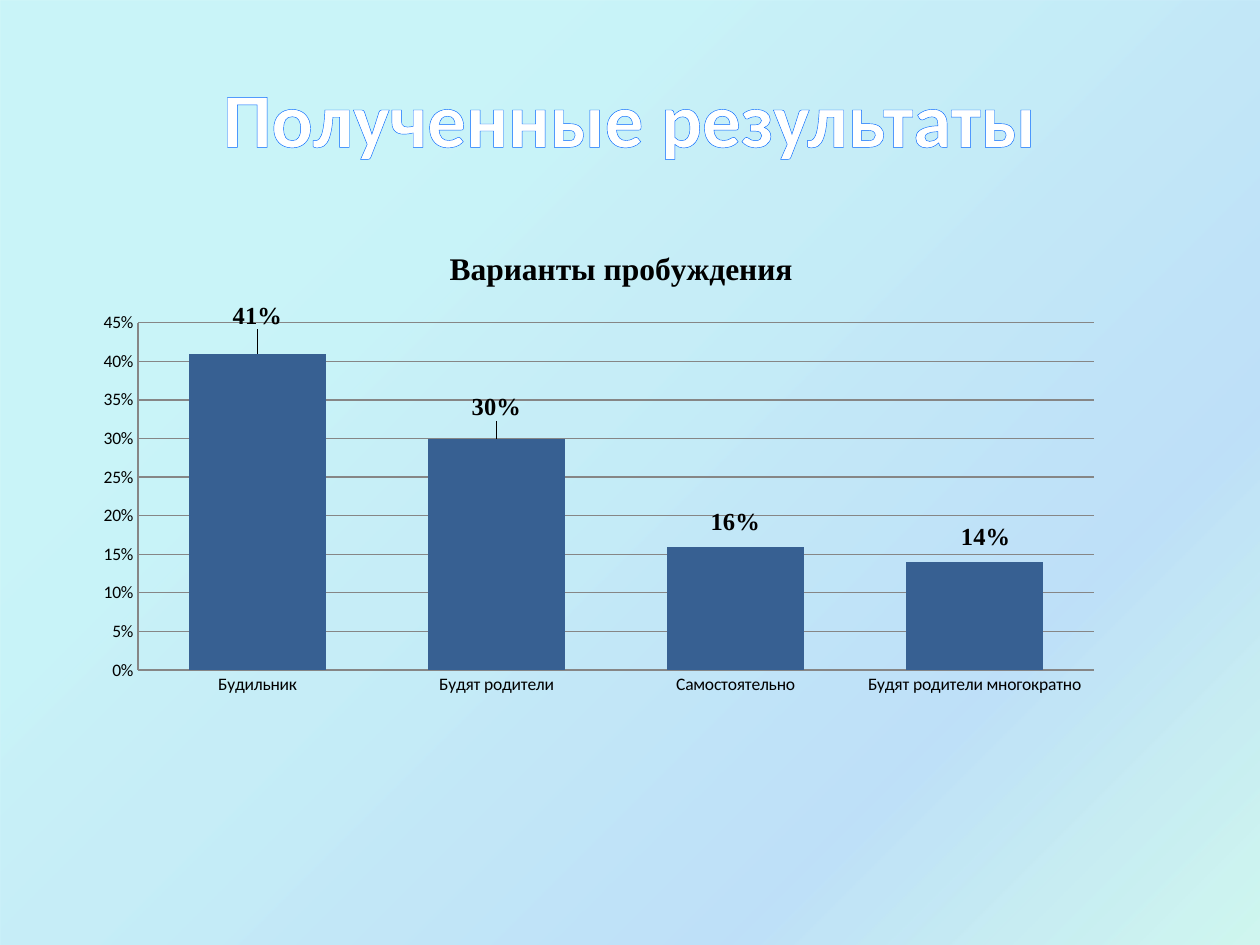
from pptx import Presentation, oxml
from pptx.chart import data as chart_data
from pptx.dml.color import RGBColor
from pptx.enum import chart as chart_enum, shapes, text
from pptx.oxml import ns
from pptx.util import Inches, Pt

GRADIENT = [(25, "21D6E0", 23), (75, "0087E6", 25), (100, "03D4A8", 18), (100, "005CBF", 26)]
ANSWERS = {
    "Будильник": 0.41,
    "Будят родители": 0.3,
    "Самостоятельно": 0.16,
    "Будят родители многократно": 0.14,
}
LABEL_SHIFTS = [(0, -0.03), (0, -0.02), (0, -0.01), (0.01, -0.01)]


def color(value):
    return RGBColor.from_string(value)


def format_font(font, name="Calibri", size=10, bold=False, fill="000000"):
    font.name = name
    font.size = Pt(size)
    font.bold = bold
    font.color.rgb = color(fill)


def write_text(frame, content, align=text.PP_ALIGN.CENTER, **font_format):
    paragraph = frame.paragraphs[0]
    paragraph.alignment = align
    run = paragraph.add_run()
    run.text = content
    format_font(run.font, **font_format)
    return run


def manual_layout(x, y, width=None, height=None):
    parts = f'<c:x val="{x}"/><c:y val="{y}"/>'
    modes = ""
    if width:
        modes = '<c:layoutTarget val="inner"/><c:xMode val="edge"/><c:yMode val="edge"/>'
        parts += f'<c:w val="{width}"/><c:h val="{height}"/>'
    return oxml.parse_xml(
        f'<c:layout {ns.nsdecls("c")}><c:manualLayout>{modes}{parts}</c:manualLayout></c:layout>'
    )


class SlideBuilder:
    line_color = "868686"
    bar_color = "376092"
    serif = "Times New Roman"

    def __init__(self, presentation):
        self.slide = presentation.slides.add_slide(presentation.slide_layouts[5])

    def backdrop(self, stops, angle):
        shape = self.slide.shapes.add_shape(
            shapes.MSO_SHAPE.RECTANGLE, 0, 0, Inches(10), Inches(7.67)
        )
        shape.shadow.inherit = False
        shape.line.fill.background()
        shape.fill.gradient()
        stop_list = "".join(
            f'<a:gs pos="{position * 1000}"><a:srgbClr val="{value}">'
            f'<a:alpha val="{alpha * 1000}"/></a:srgbClr></a:gs>'
            for position, value, alpha in stops
        )
        gradient = oxml.parse_xml(
            f'<a:gradFill {ns.nsdecls("a")} rotWithShape="1"><a:gsLst>{stop_list}</a:gsLst>'
            f'<a:lin ang="{angle * 60000}" scaled="0"/></a:gradFill>'
        )
        properties = shape.element.spPr
        properties.replace(properties.find(ns.qn("a:gradFill")), gradient)
        self.slide.shapes.element.insert(2, shape.element)

    def title(self, content, outline, outline_width):
        title = self.slide.shapes.title
        title.left, title.top = Inches(0.5), Inches(0.3)
        title.width, title.height = Inches(9), Inches(1.25)
        title.text_frame.vertical_anchor = text.MSO_ANCHOR.MIDDLE
        run = write_text(title.text_frame, content, size=44, bold=True, fill="FFFFFF")
        line = oxml.parse_xml(
            f'<a:ln {ns.nsdecls("a")} w="{Pt(outline_width)}"><a:solidFill>'
            f'<a:srgbClr val="{outline}"/></a:solidFill></a:ln>'
        )
        run.font._element.insert(0, line)

    def column_chart(self, heading, answers, label_shifts):
        table = chart_data.CategoryChartData(number_format="0%")
        table.categories = list(answers)
        table.add_series("Series 1", list(answers.values()))
        chart = self.slide.shapes.add_chart(
            chart_enum.XL_CHART_TYPE.COLUMN_CLUSTERED,
            Inches(0.43), Inches(1.78), Inches(9), Inches(4.95), table,
        ).chart
        format_font(chart.font)
        chart.has_legend = False
        chart.has_title = True
        write_text(chart.chart_title.text_frame, heading, name=self.serif, size=18, bold=True)
        chart.chart_title.include_in_layout = False
        plot_area = chart.element.find(".//" + ns.qn("c:plotArea"))
        for layout in plot_area.findall(ns.qn("c:layout")):
            plot_area.remove(layout)
        plot_area.insert(0, manual_layout(0.074, 0.158, 0.843, 0.557))

        value_axis = chart.value_axis
        value_axis.minimum_scale, value_axis.maximum_scale = 0, 0.45
        value_axis.major_unit = 0.05
        value_axis.tick_labels.number_format = "0%"
        value_axis.tick_labels.number_format_is_linked = False
        value_axis.has_major_gridlines = True
        for axis in (chart.category_axis, value_axis):
            axis.major_tick_mark = chart_enum.XL_TICK_MARK.NONE
            self.line(axis.format.line)
        self.line(value_axis.major_gridlines.format.line)

        plot = chart.plots[0]
        plot.gap_width = 75
        plot.vary_by_categories = False
        series = plot.series[0]
        series.format.fill.solid()
        series.format.fill.fore_color.rgb = color(self.bar_color)
        labels = series.data_labels
        labels.show_value = True
        labels.number_format, labels.number_format_is_linked = "0%", False
        format_font(labels.font, name=self.serif, size=14, bold=True)
        for index, shift in enumerate(label_shifts):
            label = series.points[index].data_label
            format_font(label.font, name=self.serif, size=14, bold=True)
            label.position = chart_enum.XL_LABEL_POSITION.OUTSIDE_END
        for element, shift in zip(chart.element.iter(ns.qn("c:dLbl")), label_shifts):
            element.insert(1, manual_layout(*shift))

    def line(self, line):
        line.color.rgb = color(self.line_color)
        line.width = Pt(0.75)


def main():
    presentation = Presentation()
    presentation.slide_width, presentation.slide_height = Inches(10), Inches(7.5)
    builder = SlideBuilder(presentation)
    builder.backdrop(GRADIENT, 45)
    builder.title("Полученные результаты", "0066FF", 1.45)
    builder.column_chart("Варианты пробуждения", ANSWERS, LABEL_SHIFTS)
    presentation.save("out.pptx")


if __name__ == "__main__":
    main()
